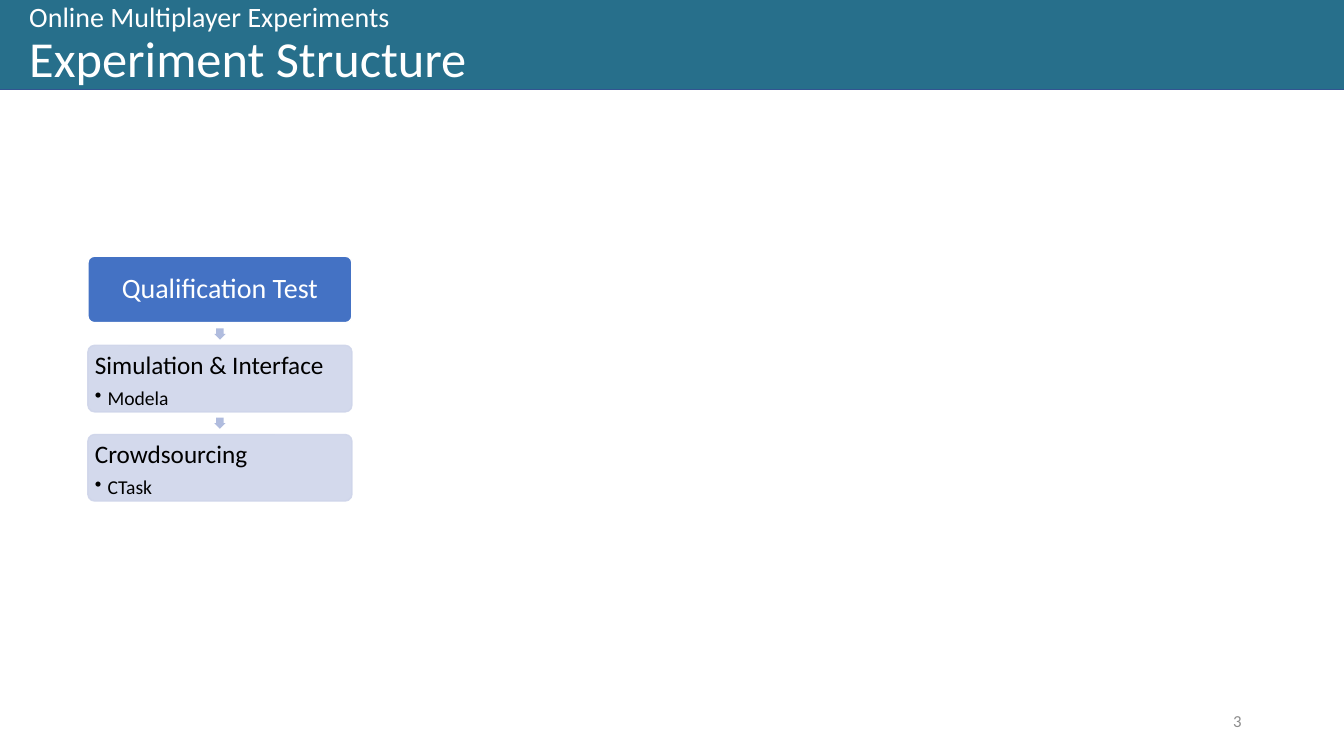
from lxml.etree import SubElement
from pptx import Presentation
from pptx.dml.color import RGBColor
from pptx.enum.shapes import MSO_SHAPE as Preset
from pptx.enum.text import MSO_ANCHOR as Anchor, MSO_AUTO_SIZE as AutoSize, PP_ALIGN as Align
from pptx.oxml.ns import qn
from pptx.util import Pt

FONT = "Calibri"
COLOURS = {
    "band": "276F8B", "band_line": "325491", "white": "FFFFFF", "black": "000000",
    "blue": "4472C4", "pale": "CFD5EA", "arrow": "B0BCDE", "grey": "8C8C8C",
}
STEPS = [("Qualification Test", None), ("Simulation & Interface", "Modela"), ("Crowdsourcing", "CTask")]


def rgb(name):
    """Return the named colour."""
    return RGBColor.from_string(COLOURS[name])


def style_runs(paragraph, size, colour):
    """Set font, size and colour on every run of a paragraph."""
    for run in paragraph.runs:
        run.font.name, run.font.size = FONT, Pt(size)
        run.font.color.rgb = rgb(colour)


def add_block(slide, preset, box, fill, line=None, opacity=100):
    """Add a flat preset shape in a box given in points."""
    shape = slide.shapes.add_shape(preset, *map(Pt, box))
    shape.shadow.inherit = False
    shape.fill.solid()
    shape.fill.fore_color.rgb = rgb(fill)
    if line:
        shape.line.color.rgb = rgb(line)
        shape.line.width = Pt(1)
    else:
        shape.line.fill.background()
    if opacity < 100:
        for colour in shape.element.spPr.iter(qn("a:srgbClr")):
            SubElement(colour, qn("a:alpha"), val=str(opacity * 1000))
    return shape


def add_header(slide, box):
    """Place the coloured band with the two-line title over it."""
    left, top, width, height = box
    band = add_block(slide, Preset.RECTANGLE, box, "band", "band_line")
    title = slide.shapes.title
    title.element.addprevious(band.element)
    title.left, title.top = Pt(left + 14.2), Pt(top - 18.7)
    title.width, title.height = Pt(width - 133), Pt(height + 39.6)
    frame = title.text_frame
    frame.auto_size, frame.word_wrap = AutoSize.NONE, True
    frame.vertical_anchor = Anchor.MIDDLE
    paragraph = frame.paragraphs[0]
    paragraph.text = "Online Multiplayer Experiments\nExperiment Structure"
    paragraph.alignment, paragraph.line_spacing = Align.LEFT, 0.9
    style_runs(paragraph, 36, "white")
    paragraph.runs[0].font.size = Pt(20)


def add_step(slide, box, heading, tool):
    """Place one step, pale with a bullet where it names a tool."""
    fill, line, opacity = ("pale", "pale", 90) if tool else ("blue", "white", 100)
    step = add_block(slide, Preset.ROUNDED_RECTANGLE, box, fill, line, opacity)
    step.adjustments[0] = 0.1
    frame = step.text_frame
    frame.word_wrap = True
    frame.margin_left = frame.margin_right = frame.margin_top = frame.margin_bottom = Pt(3.6)
    frame.vertical_anchor = Anchor.TOP if tool else Anchor.MIDDLE
    paragraph = frame.paragraphs[0]
    paragraph.text = heading
    paragraph.alignment = Align.LEFT if tool else Align.CENTER
    paragraph.line_spacing, paragraph.space_after = 0.9, Pt(6.3)
    style_runs(paragraph, 18 if tool else 20, "black" if tool else "white")
    if tool:
        bullet = frame.add_paragraph()
        bullet.text, bullet.level, bullet.alignment = tool, 1, Align.LEFT
        bullet.line_spacing, bullet.space_after = 0.9, Pt(2.1)
        style_runs(bullet, 14, "black")
        properties = bullet._p.get_or_add_pPr()
        properties.set("marL", str(Pt(9)))
        properties.set("indent", str(Pt(-9)))
        SubElement(properties, qn("a:buChar"), char="•")


def add_flow(slide, box):
    """Stack the steps in a box with an arrow centred in each gap."""
    left, top, width, height = box
    gap, arrow_size = 16.2, 8
    step_height = (height - gap * (len(STEPS) - 1)) / len(STEPS)
    for index, (heading, tool) in enumerate(STEPS):
        step_top = top + index * (step_height + gap)
        if index:
            arrow_box = (left + (width - arrow_size) / 2, step_top - (gap + arrow_size) / 2,
                         arrow_size, arrow_size)
            arrow = add_block(slide, Preset.RIGHT_ARROW, arrow_box, "arrow")
            arrow.adjustments[0], arrow.adjustments[1] = 0.67, 0.5
            arrow.rotation = 90
        add_step(slide, (left, step_top, width, step_height), heading, tool)


def add_page_number(slide, box, number):
    """Place the page number at the right of its box."""
    frame = slide.shapes.add_textbox(*map(Pt, box)).text_frame
    frame.word_wrap, frame.vertical_anchor = True, Anchor.MIDDLE
    paragraph = frame.paragraphs[0]
    paragraph.text, paragraph.alignment = str(number), Align.RIGHT
    style_runs(paragraph, 12, "grey")


def main():
    """Build and save the slide."""
    presentation = Presentation()
    presentation.slide_width, presentation.slide_height = Pt(960), Pt(540)
    slide = presentation.slides.add_slide(presentation.slide_layouts.get_by_name("Title Only"))
    add_header(slide, (-0.5, -0.7, 961, 64.8))
    add_flow(slide, (62.8, 183, 188.6, 174.9))
    add_page_number(slide, (678, 500.5, 216, 28.8), 3)
    presentation.save("out.pptx")


if __name__ == "__main__":
    main()
